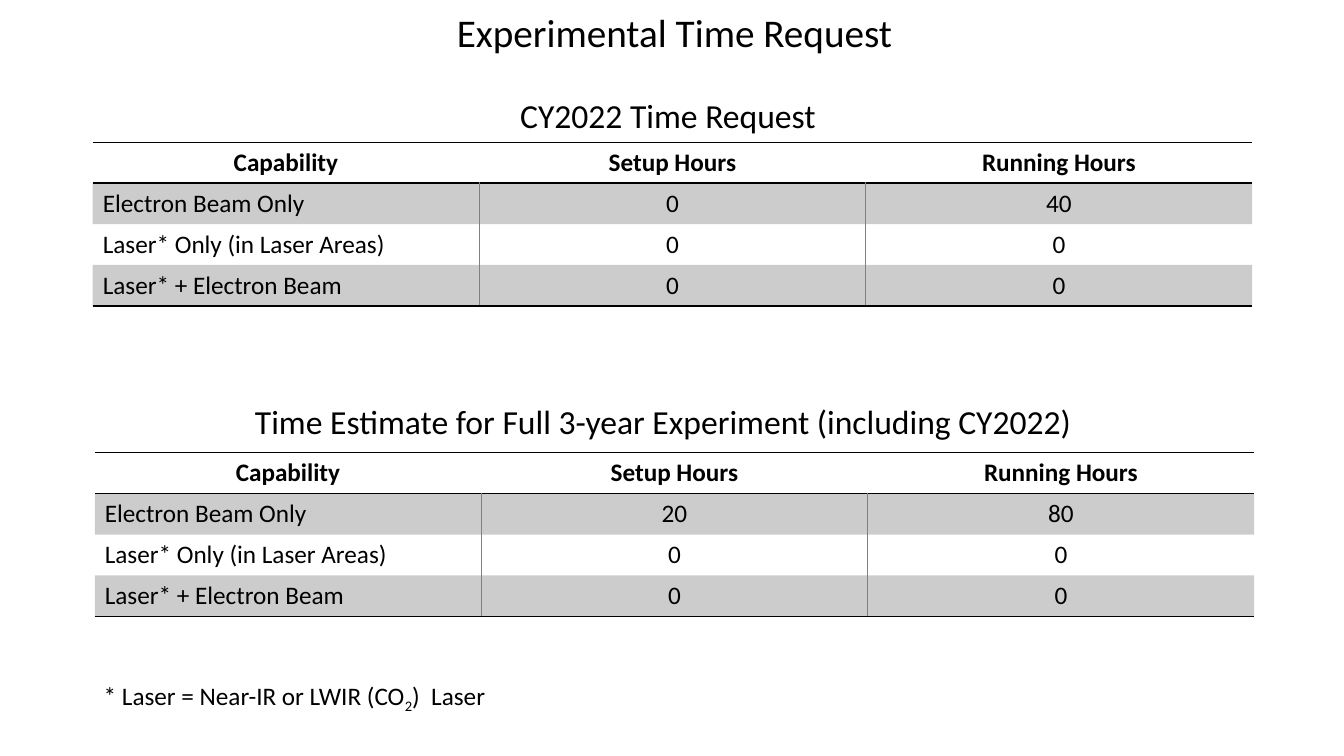
from pptx import Presentation, util as u
from pptx.dml.color import RGBColor
from pptx.enum import text
from pptx.oxml.ns import qn
from lxml import etree

BLACK = RGBColor(0x00, 0x00, 0x00)
GREY = RGBColor(0x80, 0x80, 0x80)
FONT = "Calibri"
SLIDE_WIDTH, SLIDE_HEIGHT = u.Inches(13.33), u.Inches(7.5)

HEADINGS = ("Capability", "Setup Hours", "Running Hours")
CAPABILITIES = ("Electron Beam Only", "Laser* Only (in Laser Areas)",
                "Laser* + Electron Beam")
HOURS_2022 = ((0, 40), (0, 0), (0, 0))
HOURS_FULL = ((20, 80), (0, 0), (0, 0))
TABLE_WIDTH, ROW_HEIGHT = 86.27, 5.42


def box(left, top, width, height):
    """Turn percentages of the slide's size into lengths."""
    return (int(SLIDE_WIDTH * left / 100), int(SLIDE_HEIGHT * top / 100),
            int(SLIDE_WIDTH * width / 100), int(SLIDE_HEIGHT * height / 100))


def format_runs(paragraph, size, bold=False):
    for run in paragraph.runs:
        run.font.name = FONT
        run.font.size = u.Pt(size)
        run.font.bold = bold
        run.font.color.rgb = BLACK


def add_title(slide, title):
    shape = slide.shapes.title
    shape.left, shape.top, shape.width, shape.height = box(7.05, 0, TABLE_WIDTH, 9.33)
    shape.text_frame.text = title
    shape.text_frame.vertical_anchor = text.MSO_ANCHOR.MIDDLE
    paragraph = shape.text_frame.paragraphs[0]
    paragraph.alignment = text.PP_ALIGN.CENTER
    paragraph.line_spacing = 0.9
    format_runs(paragraph, 28)


def add_label(slide, area, pieces, size):
    """Add one line of text; every second piece is a subscript."""
    frame = slide.shapes.add_textbox(*box(*area)).text_frame
    frame.word_wrap = False
    frame.auto_size = text.MSO_AUTO_SIZE.SHAPE_TO_FIT_TEXT
    paragraph = frame.paragraphs[0]
    for index, piece in enumerate(pieces):
        run = paragraph.add_run()
        run.text = piece
        if index % 2:
            run.font._element.set("baseline", "-25000")
    format_runs(paragraph, size)


def set_border(cell, side, color):
    properties = cell._tc.get_or_add_tcPr()
    line = etree.SubElement(properties, qn("a:ln" + side), w=str(u.Pt(1)))
    if color is None:
        etree.SubElement(line, qn("a:noFill"))
    else:
        fill = etree.SubElement(line, qn("a:solidFill"))
        etree.SubElement(fill, qn("a:srgbClr"), val=str(color))


def shade(cell):
    cell.fill.solid()
    cell.fill.fore_color.rgb = BLACK
    color = cell._tc.tcPr.find(".//" + qn("a:solidFill") + "/" + qn("a:srgbClr"))
    for candidate in cell._tc.tcPr.findall(qn("a:solidFill")):
        color = candidate[0]
    etree.SubElement(color, qn("a:alpha"), val="20000")


def format_cell(cell, row, column, last_row, last_column):
    # Rules above and below the header and at the foot, grey between columns
    body = row > 0
    borders = {"L": GREY if body and column > 0 else None,
               "R": GREY if body and column < last_column else None,
               "T": BLACK if row < 2 else None,
               "B": BLACK if row in (0, last_row) else None}
    for side, color in borders.items():
        set_border(cell, side, color)
    if row % 2:
        shade(cell)
    else:
        cell.fill.background()
    paragraph = cell.text_frame.paragraphs[0]
    if column or not body:
        paragraph.alignment = text.PP_ALIGN.CENTER
    format_runs(paragraph, 18, bold=not body)


def add_hours_table(slide, left, top, hours):
    rows = [HEADINGS] + [(name, *values) for name, values in zip(CAPABILITIES, hours)]
    area = box(left, top, TABLE_WIDTH, ROW_HEIGHT * len(rows))
    table = slide.shapes.add_table(len(rows), len(HEADINGS), *area).table
    table.first_row = table.horz_banding = False
    for row, values in enumerate(rows):
        for column, value in enumerate(values):
            cell = table.cell(row, column)
            cell.text_frame.text = str(value)
            format_cell(cell, row, column, len(rows) - 1, len(HEADINGS) - 1)


def main():
    presentation = Presentation()
    presentation.slide_width, presentation.slide_height = SLIDE_WIDTH, SLIDE_HEIGHT
    slide = presentation.slides.add_slide(presentation.slide_layouts[5])
    add_title(slide, "Experimental Time Request")

    # Request for the current year
    add_label(slide, (37.96, 11.87, 23.7, 6.67), ["CY2022 Time Request"], 24)
    add_hours_table(slide, 6.9, 18.8, HOURS_2022)

    # Estimate for the whole experiment
    add_label(slide, (18.23, 52.4, 62.79, 6.67),
              ["Time Estimate for Full 3-year Experiment (including CY2022)"], 24)
    add_hours_table(slide, 7.05, 59.87, HOURS_FULL)

    # Footnote
    add_label(slide, (6.98, 89.33, 30.3, 5.33),
              ["* Laser = Near-IR or LWIR (CO", "2", ")  Laser"], 18)
    presentation.save("out.pptx")


if __name__ == "__main__":
    main()
